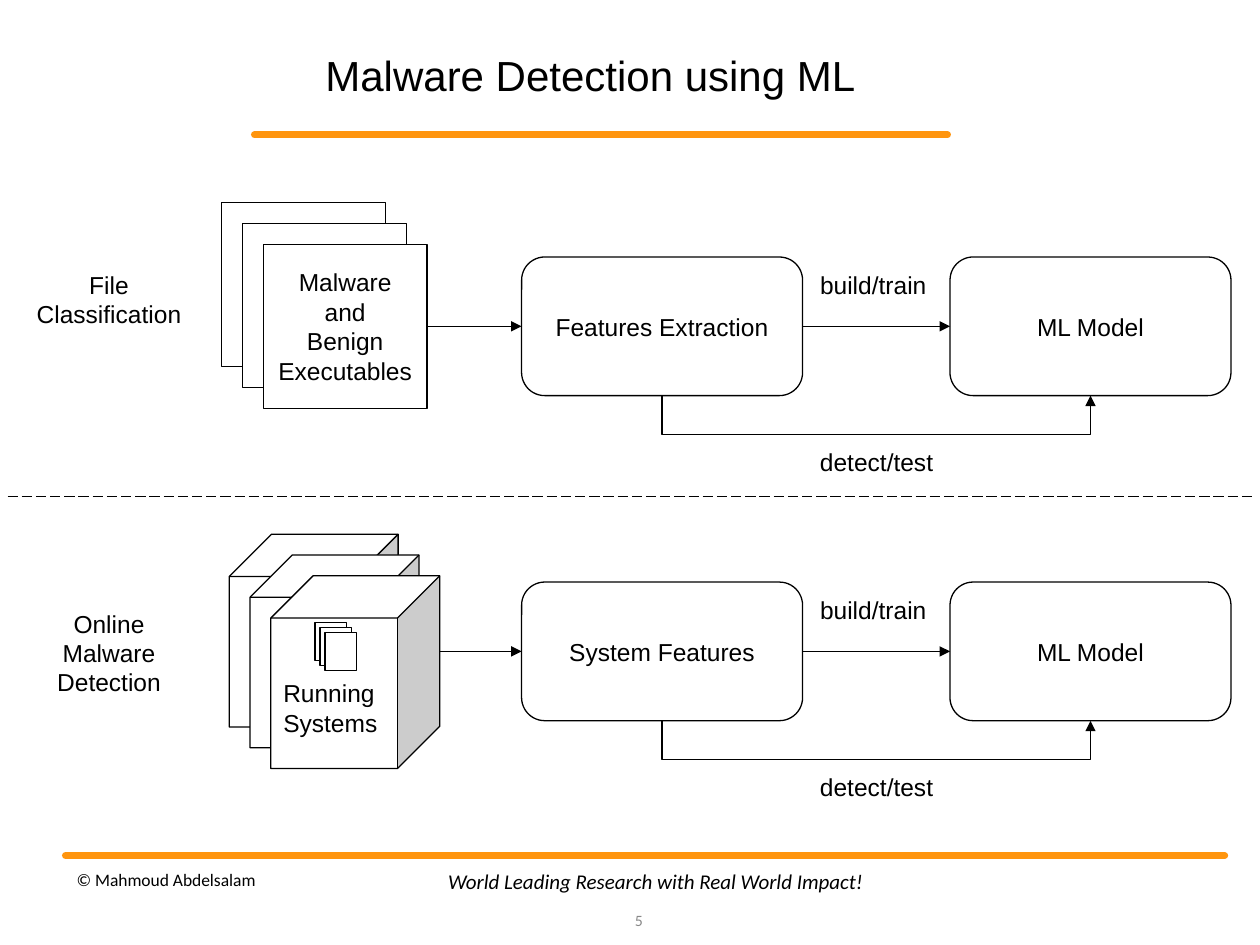
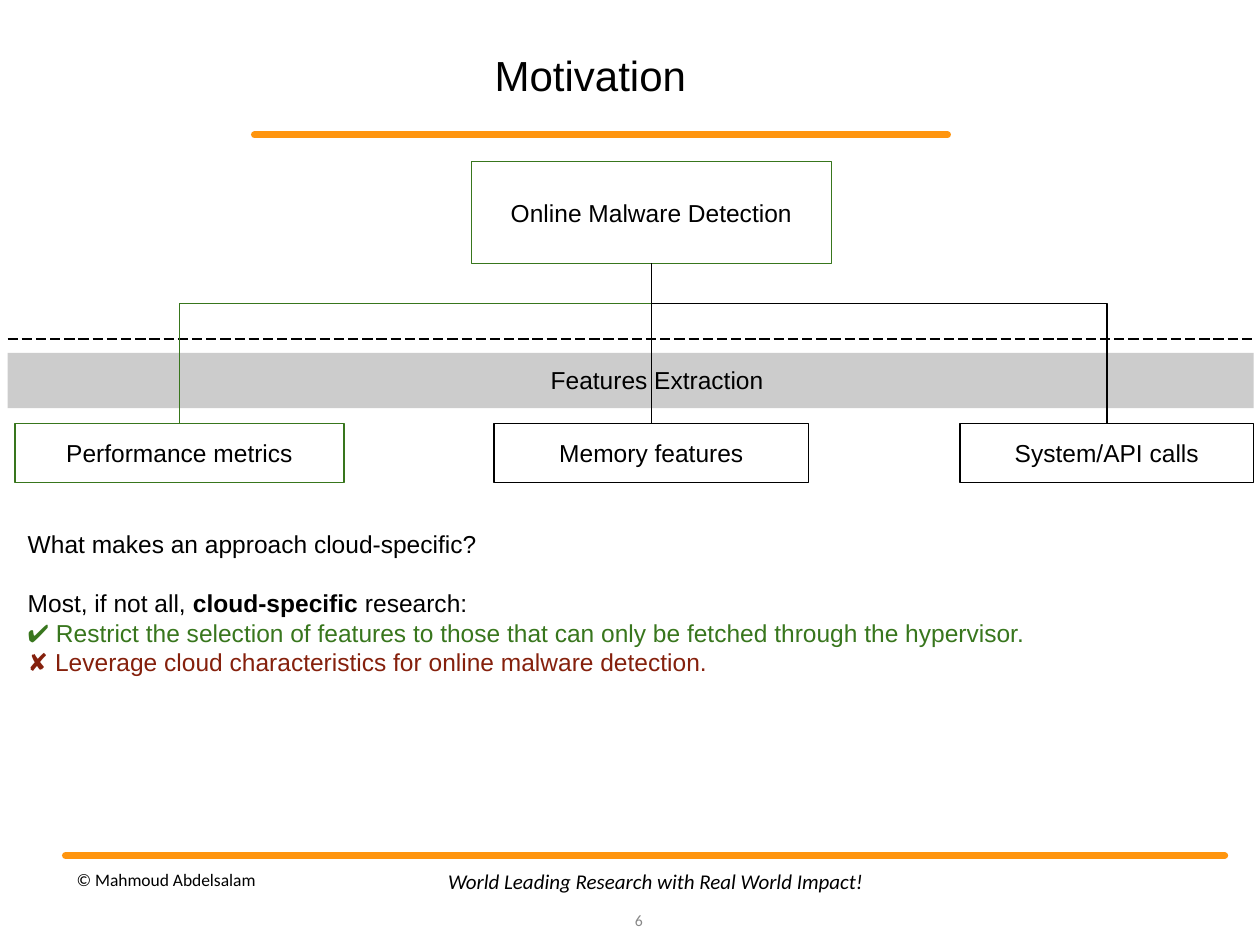
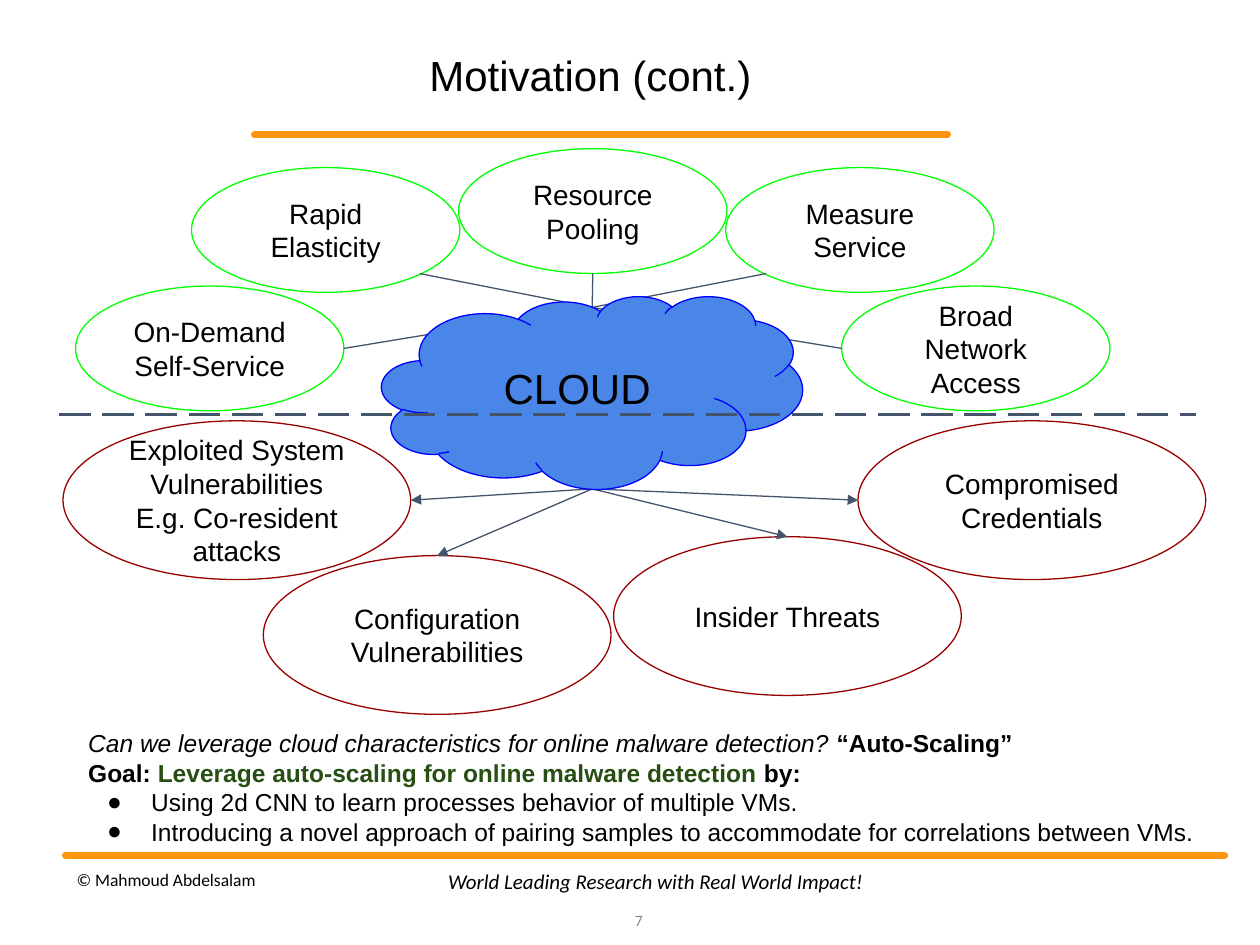
"""Build three slides on online malware detection in the cloud."""
from lxml.etree import SubElement as Sub
from pptx import Presentation
from pptx.dml.color import RGBColor as Rgb
from pptx.enum.dml import MSO_LINE as Dash
from pptx.enum.shapes import MSO_CONNECTOR as Conn, MSO_SHAPE as Kind
from pptx.enum.text import MSO_ANCHOR as Anchor, MSO_AUTO_SIZE as Auto, PP_ALIGN as Align
from pptx.oxml.ns import qn
from pptx.util import Inches, Pt

HUES = {
    "black": "000000", "white": "FFFFFF", "gray": "888888", "band": "CCCCCC",
    "orange": "FF950E", "green": "38761D", "forest": "274E13", "rust": "85200C",
    "lime": "00FF00", "red": "980000", "slate": "44546A", "sky": "4A86E8",
    "blue": "0000FF",
}
TITLE, BODY = 5, 1


def hue(name):
    return Rgb.from_string(HUES[name])


def style(para, size=14, align=Align.CENTER, font="Arial", color="black", italic=False):
    para.alignment = align
    face = para.font
    face.size, face.name, face.italic = Pt(size), font, italic
    face.color.rgb = hue(color)


def write(frame, text, pad=0.1, anchor=Anchor.MIDDLE, **look):
    frame.word_wrap, frame.auto_size = True, Auto.NONE
    frame.vertical_anchor = anchor
    frame.margin_left = frame.margin_right = Inches(0.1)
    frame.margin_top = frame.margin_bottom = Inches(pad)
    frame.text = text
    for para in frame.paragraphs:
        style(para, **look)


def place(shape, x, y, w, h):
    shape.left, shape.top = Inches(x), Inches(y)
    shape.width, shape.height = Inches(w), Inches(h)


def label(slide, text, x, y, w, h, anchor=Anchor.TOP, **look):
    area = slide.shapes.add_textbox(*map(Inches, (x, y, w, h)))
    write(area.text_frame, text, anchor=anchor, **look)


def box(slide, kind, x, y, w, h, text="", fill="white", line="black", **look):
    shape = slide.shapes.add_shape(kind, *map(Inches, (x, y, w, h)))
    shape.shadow.inherit = False
    shape.fill.solid()
    shape.fill.fore_color.rgb = hue(fill)
    if line:
        shape.line.color.rgb = hue(line)
        shape.line.width = Pt(0.75)
    else:
        shape.line.fill.background()
    if text:
        write(shape.text_frame, text, **look)
    return shape


def stack(slide, kind, x, y, w, h, step, text=""):
    """Draw three overlapping shapes and return the front one."""
    for i in range(2):
        box(slide, kind, x + i * step, y + i * step, w, h)
    return box(slide, kind, x + 2 * step, y + 2 * step, w, h, text)


def paint(link, color, width, arrow=False, dash=None, cap=None):
    link.line.color.rgb = hue(color)
    link.line.width = Pt(width)
    if dash:
        link.line.dash_style = dash
    props = link.element.spPr
    pen = props.get_or_add_ln()
    if cap:
        pen.set("cap", cap)
    if arrow:
        Sub(pen, qn("a:tailEnd"), type="triangle")
    Sub(props, qn("a:effectLst"))


def rule(slide, x1, y1, x2, y2, color="black", width=0.75, **look):
    ends = map(Inches, (x1, y1, x2, y2))
    link = slide.shapes.add_connector(Conn.STRAIGHT, *ends)
    paint(link, color, width, **look)


def join(slide, src, out, dst, into, arrow=False):
    link = slide.shapes.add_connector(Conn.STRAIGHT, 0, 0, 0, 0)
    link.begin_connect(src, out)
    link.end_connect(dst, into)
    paint(link, "black", 0.75, arrow)


def elbow(slide, src, dst, into, drop, color="black", arrow=False):
    """Leave the bottom of src, turn after drop inches, and reach dst."""
    link = slide.shapes.add_connector(Conn.ELBOW, 0, 0, 0, 0)
    link.begin_connect(src, 2)
    link.end_connect(dst, into)
    x1, x2 = (s.left + s.width // 2 for s in (src, dst))
    y1 = src.top + src.height
    y2 = dst.top + (dst.height if into == 2 else 0)
    run, span = max(y2 - y1, Inches(0.001)), abs(x2 - x1)
    link.left, link.top = (x1 + x2 - run) // 2, (y1 + y2 - span) // 2
    link.width, link.height = run, span
    props = link.element.spPr
    form = props.find(qn("a:xfrm"))
    for flip in ("flipH", "flipV"):
        form.attrib.pop(flip, None)
    right = x2 > x1
    form.set("rot", "16200000" if right else "5400000")
    if right:
        form.set("flipH", "1")
    guides = props.find(qn("a:prstGeom")).find(qn("a:avLst"))
    turn = round(Inches(drop) / run * 100000)
    Sub(guides, qn("a:gd"), name="adj1", fmla=f"val {turn}")
    paint(link, color, 0.75, arrow)


def body(slide, lines, x, y, w, h):
    """Fill the body with (runs, bullet, gap) lines of (text, look) runs."""
    hold = slide.placeholders[1]
    place(hold, x, y, w, h)
    frame = hold.text_frame
    write(frame, "", anchor=Anchor.TOP)
    for i, (runs, dot, gap) in enumerate(lines):
        para = frame.add_paragraph() if i else frame.paragraphs[0]
        props = para._p.get_or_add_pPr()
        props.set("marL", str(Inches(0.5 if dot else 0)))
        props.set("indent", str(Inches(-0.35 if dot else 0)))
        para.space_before = Pt(gap)
        if dot:
            Sub(props, qn("a:buChar"), char="●")
        else:
            Sub(props, qn("a:buNone"))
        style(para, align=Align.LEFT)
        for text, look in runs:
            run = para.add_run()
            run.text = text
            for key, value in look.items():
                if key == "color":
                    run.font.color.rgb = hue(value)
                else:
                    setattr(run.font, key, value)


def start(deck, layout, title, page):
    """Add a slide with its title, orange rules and footer."""
    slide = deck.slides.add_slide(deck.slide_layouts[layout])
    head = slide.shapes.title
    place(head, 1.99, 0.34, 5.39, 0.51)
    write(head.text_frame, title, pad=0.05, anchor=Anchor.BOTTOM, size=24)
    head.text_frame.paragraphs[0].line_spacing = 0.9
    for x1, x2, y in ((2.02, 7.52, 1.07), (0.52, 9.72, 6.79)):
        rule(slide, x1, y, x2, y, "orange", 4, cap="rnd")
    foot = dict(anchor=Anchor.MIDDLE, font="Calibri", pad=0.05)
    label(slide, "© Mahmoud Abdelsalam", 0.51, 6.8, 2.75, 0.36,
          size=10, align=Align.LEFT, **foot)
    label(slide, "World Leading Research with Real World Impact!",
          3.02, 6.79, 4.37, 0.4, size=12, italic=True, **foot)
    label(slide, str(page), 4.8, 7.1, 0.4, 0.4,
          size=9, align=Align.RIGHT, color="gray", **foot)
    return slide


def flow(slide, top, name):
    """Draw one feature box, its model and the two links between them."""
    feats, model = (box(slide, Kind.ROUNDED_RECTANGLE, x, top, 2.23, 1.1, text)
                    for x, text in ((4.14, name), (7.54, "ML Model")))
    join(slide, feats, 3, model, 1, arrow=True)
    elbow(slide, feats, model, 2, 0.31 - 0.05, arrow=True)
    label(slide, "build/train", 6.41, top, 1.09, 0.42, align=Align.LEFT)
    label(slide, "detect/test", 6.41, top + 1.41, 1.17, 0.42, align=Align.LEFT)
    return feats


def detect(deck):
    slide = start(deck, TITLE, "Malware Detection using ML", 5)
    feats = flow(slide, 2.04, "Features Extraction")
    files = stack(slide, Kind.RECTANGLE, 1.76, 1.61, 1.3, 1.3, 0.165,
                  "Malware and\nBenign\nExecutables")
    join(slide, files, 3, feats, 1, arrow=True)
    flow(slide, 4.62, "System Features")
    host = stack(slide, Kind.CUBE, 1.82, 4.24, 1.34, 1.53, 0.165)
    write(host.text_frame, "Running\nSystems", align=Align.LEFT)
    host.text_frame.margin_top = Inches(0.33)
    rule(slide, 3.49, 5.17, 4.14, 5.17, arrow=True)
    stack(slide, Kind.RECTANGLE, 2.5, 4.94, 0.25, 0.3, 0.04)
    label(slide, "File Classification", 0.14, 2.04, 1.45, 0.66)
    label(slide, "Online Malware\nDetection", 0.14, 4.73, 1.45, 0.88)
    rule(slide, 0.06, 3.94, 9.95, 3.94, dash=Dash.LONG_DASH)


def motive(deck):
    slide = start(deck, BODY, "Motivation", 6)
    root = box(slide, Kind.RECTANGLE, 3.74, 1.28, 2.86, 0.81,
               "Online Malware Detection", line="green")
    rule(slide, 0.06, 2.69, 9.95, 2.69, dash=Dash.LONG_DASH)
    band = box(slide, Kind.RECTANGLE, 0.06, 2.8, 9.89, 0.44, "Features Extraction",
               fill="band", line=None, anchor=Anchor.TOP)
    band.text_frame.margin_left = Inches(0.52)
    perf, mem, calls = (
        box(slide, Kind.RECTANGLE, x, 3.36, w, 0.47, text, line=line)
        for x, w, text, line in (
            (0.12, 2.61, "Performance metrics", "green"),
            (3.92, 2.5, "Memory features", "black"),
            (7.62, 2.33, "System/API calls", "black")))
    elbow(slide, root, perf, 0, 0.32, "green")
    join(slide, root, 2, mem, 0)
    elbow(slide, root, calls, 0, 0.32)
    body(slide, (
        ([("What makes an approach cloud-specific?", {})], False, 0),
        ([("Most, if not all, ", {}), ("cloud-specific", {"bold": True}),
          (" research:", {})], False, 17),
        ([("✔️ Restrict the selection of features to those that can only be "
           "fetched through the hypervisor.", {"color": "green"})], False, 0),
        ([("✘ Leverage cloud characteristics for online malware detection.",
           {"color": "rust"})], False, 0),
    ), 0.12, 4.1, 9.71, 2.39)


def ring(slide, hub, w, h, line, items, arrow=False):
    """Draw ovals and link the hub to a point (fx, fy) of each one."""
    for text, x, y, fx, fy in items:
        box(slide, Kind.OVAL, x, y, w, h, text, line=line, size=16)
    for text, x, y, fx, fy in items:
        rule(slide, *hub, x + fx * w, y + fy * h, "slate", arrow=arrow)


def cloud(deck):
    slide = start(deck, BODY, "Motivation (cont.)", 7)
    ring(slide, (4.7, 2.44), 2.13, 0.99, "lime", (
        ("On-Demand\nSelf-Service", 0.6, 2.27, 1, 0.5),
        ("Rapid Elasticity", 1.52, 1.33, 0.85, 0.85),
        ("Measure Service", 5.76, 1.33, 0.15, 0.85),
        ("Broad Network Access", 6.68, 2.27, 0, 0.5),
        ("Resource Pooling", 3.64, 1.18, 0.5, 1)))
    ring(slide, (4.7, 3.88), 2.76, 1.26, "red", (
        ("Exploited System Vulnerabilities\nE.g. Co-resident attacks",
         0.5, 3.34, 1, 0.5),
        ("Configuration Vulnerabilities", 2.09, 4.41, 0.5, 0),
        ("Insider Threats", 4.87, 4.26, 0.5, 0),
        ("Compromised Credentials", 6.81, 3.34, 0, 0.5)), arrow=True)
    box(slide, Kind.CLOUD, 3.03, 2.35, 3.34, 1.53, "CLOUD", "sky", "blue", size=24)
    rule(slide, 0.47, 3.29, 9.49, 3.29, "slate", 2.25, dash=Dash.LONG_DASH)
    bold = {"bold": True}
    body(slide, (
        ([("Can we leverage cloud characteristics for online malware detection? ",
           {"italic": True}), ("“Auto-Scaling”", bold)], False, 0),
        ([("Goal: ", bold),
          ("Leverage auto-scaling for online malware detection",
           {"bold": True, "color": "forest"}), (" by:", bold)], False, 0),
        ([("Using 2d CNN to learn processes behavior of multiple VMs.", {})], True, 0),
        ([("Introducing a novel approach of pairing samples to accommodate for "
           "correlations between VMs.", {})], True, 0),
    ), 0.6, 5.68, 9.15, 0.99)


def main():
    deck = Presentation()
    deck.slide_width, deck.slide_height = Inches(10), Inches(7.5)
    detect(deck)
    motive(deck)
    cloud(deck)
    deck.save("out.pptx")


if __name__ == "__main__":
    main()
